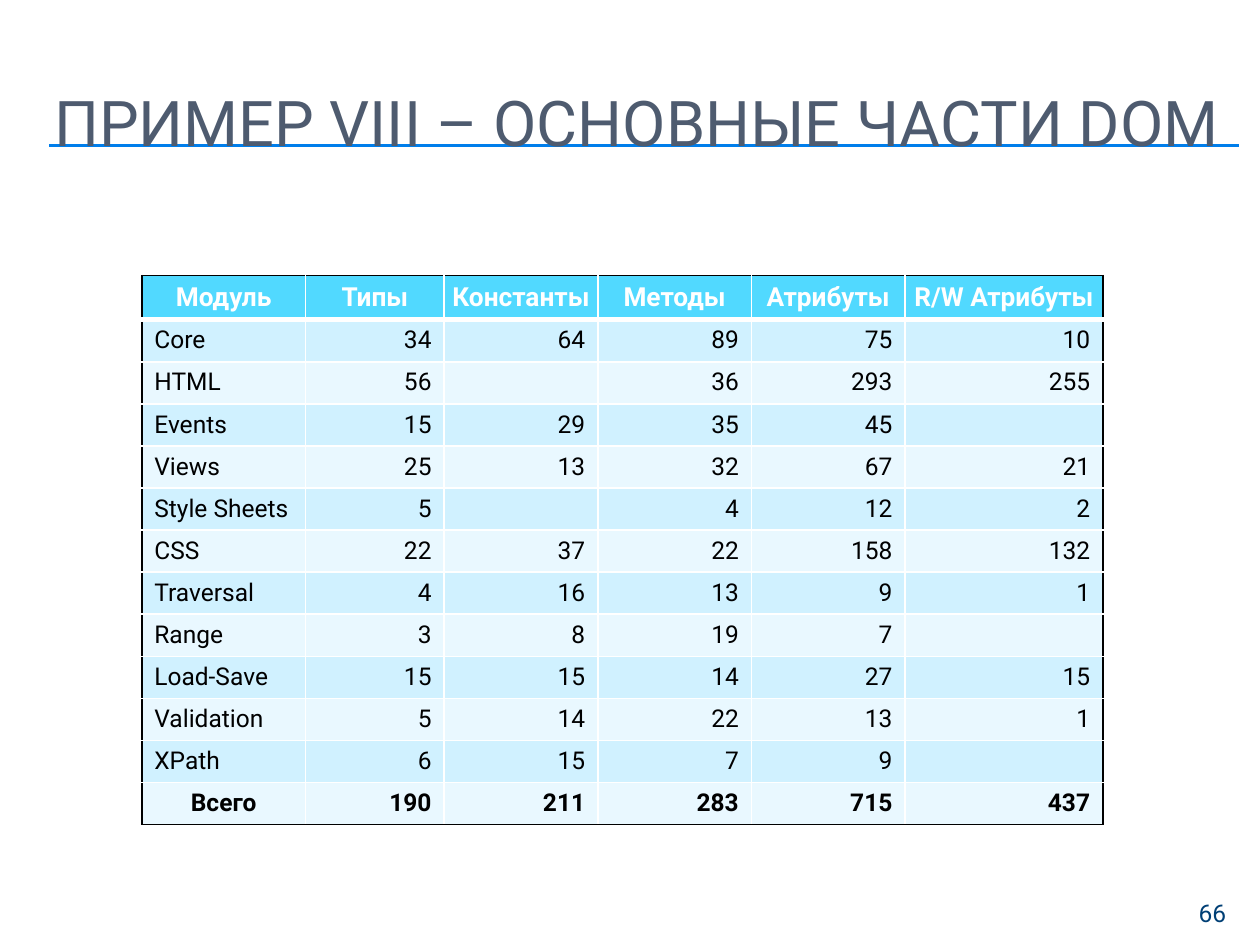
from lxml.etree import SubElement
from pptx import Presentation
from pptx.dml.color import RGBColor
from pptx.enum.shapes import MSO_CONNECTOR
from pptx.enum.text import MSO_ANCHOR, MSO_AUTO_SIZE, PP_ALIGN
from pptx.oxml.ns import qn
from pptx.util import Pt

# Content
TITLE = "ПРИМЕР VIII – ОСНОВНЫЕ ЧАСТИ DOM"
PAGE_NUMBER = "66"
MODULES = [
    ("Модуль", "Типы", "Константы", "Методы", "Атрибуты", "R/W Атрибуты"),
    ("Core", 34, 64, 89, 75, 10),
    ("HTML", 56, "", 36, 293, 255),
    ("Events", 15, 29, 35, 45, ""),
    ("Views", 25, 13, 32, 67, 21),
    ("Style Sheets", 5, "", 4, 12, 2),
    ("CSS", 22, 37, 22, 158, 132),
    ("Traversal", 4, 16, 13, 9, 1),
    ("Range", 3, 8, 19, 7, ""),
    ("Load-Save", 15, 15, 14, 27, 15),
    ("Validation", 5, 14, 22, 13, 1),
    ("XPath", 6, 15, 7, 9, ""),
    ("Всего", 190, 211, 283, 715, 437),
]

# Style and measures, in points
FONT = "Roboto"
WHITE = RGBColor(0xFF, 0xFF, 0xFF)
BLACK = RGBColor(0x00, 0x00, 0x00)
SLATE = RGBColor(0x4E, 0x5B, 0x6F)
NAVY = RGBColor(0x00, 0x3F, 0x75)
BLUE = RGBColor(0x00, 0x7E, 0xEB)
CYAN = RGBColor(0x51, 0xD9, 0xFF)
BAND_DARK = RGBColor(0xD0, 0xF1, 0xFF)
BAND_LIGHT = RGBColor(0xE9, 0xF8, 0xFF)
RULES = [(82.8, CYAN), (82.8, BLUE), (83.4, BLUE)]
RULE_LEFT, RULE_RIGHT = 28.1, 707.8
TABLE_LEFT, TABLE_TOP = 81, 157.5
COLUMN_WIDTHS = [93.6, 79.2, 87.8, 87.8, 87.8, 113]
HEADER_HEIGHT, ROW_HEIGHT = 25, 23.8


def format_text(paragraph, size, color, bold=False, align=PP_ALIGN.LEFT):
    paragraph.alignment = align
    paragraph._p.get_or_add_endParaRPr().set("sz", str(size * 100))
    for run in paragraph.runs:
        run.font.name = FONT
        run.font.size = Pt(size)
        run.font.bold = bold
        run.font.color.rgb = color


def add_border(cell, side, color, width):
    border = SubElement(cell._tc.get_or_add_tcPr(), qn(f"a:ln{side}"), w=str(Pt(width)))
    fill = SubElement(border, qn("a:solidFill"))
    SubElement(fill, qn("a:srgbClr"), val=str(color))


presentation = Presentation()
presentation.slide_width, presentation.slide_height = Pt(720), Pt(540)
slide = presentation.slides.add_slide(presentation.slide_layouts[5])

# Rules under the title
for y, color in RULES:
    rule = slide.shapes.add_connector(
        MSO_CONNECTOR.STRAIGHT, Pt(RULE_LEFT), Pt(y), Pt(RULE_RIGHT), Pt(y))
    rule.line.color.rgb = color
    rule.line.width = Pt(0.75)
    SubElement(rule._element.spPr, qn("a:effectLst"))

# Title, in front of the rules
title = slide.shapes.title
title.left, title.top, title.width, title.height = Pt(23.8), Pt(36), Pt(684), Pt(66.2)
title.text_frame.text = TITLE
title.text_frame.word_wrap = True
title.text_frame.auto_size = MSO_AUTO_SIZE.NONE
title.text_frame.vertical_anchor = MSO_ANCHOR.MIDDLE
format_text(title.text_frame.paragraphs[0], 36, SLATE)
slide.shapes._spTree.append(title._element)

# Page number
page_number = slide.shapes.add_textbox(Pt(648), Pt(509.8), Pt(59.8), Pt(19.4))
page_number.text_frame.word_wrap = True
page_number.text_frame.text = PAGE_NUMBER
format_text(page_number.text_frame.paragraphs[0], 14, NAVY, align=PP_ALIGN.RIGHT)

# Table of modules
last_row, last_column = len(MODULES) - 1, len(COLUMN_WIDTHS) - 1
modules = slide.shapes.add_table(
    len(MODULES), len(COLUMN_WIDTHS), Pt(TABLE_LEFT), Pt(TABLE_TOP),
    Pt(sum(COLUMN_WIDTHS)), Pt(HEADER_HEIGHT + last_row * ROW_HEIGHT)).table
for column, width in zip(modules.columns, COLUMN_WIDTHS):
    column.width = Pt(width)

for r, values in enumerate(MODULES):
    header, total = r == 0, r == last_row
    modules.rows[r].height = Pt(HEADER_HEIGHT if header else ROW_HEIGHT)
    for c, value in enumerate(values):
        cell = modules.cell(r, c)
        # Black outside, white inside, thick white under the header
        add_border(cell, "L", BLACK if c == 0 else WHITE, 1)
        add_border(cell, "R", BLACK if c == last_column else WHITE, 1)
        add_border(cell, "T", BLACK if header else WHITE, 3 if r == 1 else 1)
        add_border(cell, "B", BLACK if total else WHITE, 3 if header else 1)
        cell.fill.solid()
        cell.fill.fore_color.rgb = CYAN if header else BAND_DARK if r % 2 else BAND_LIGHT
        if header and c != 1:
            cell.margin_left = cell.margin_right = Pt(3)
        if header or (total and c == 0):
            align = PP_ALIGN.CENTER
        else:
            align = PP_ALIGN.RIGHT if c else PP_ALIGN.LEFT
        cell.text_frame.text = str(value)
        format_text(cell.text_frame.paragraphs[0], 15 if header else 14,
                    WHITE if header else BLACK, header or total, align)

presentation.save("out.pptx")
